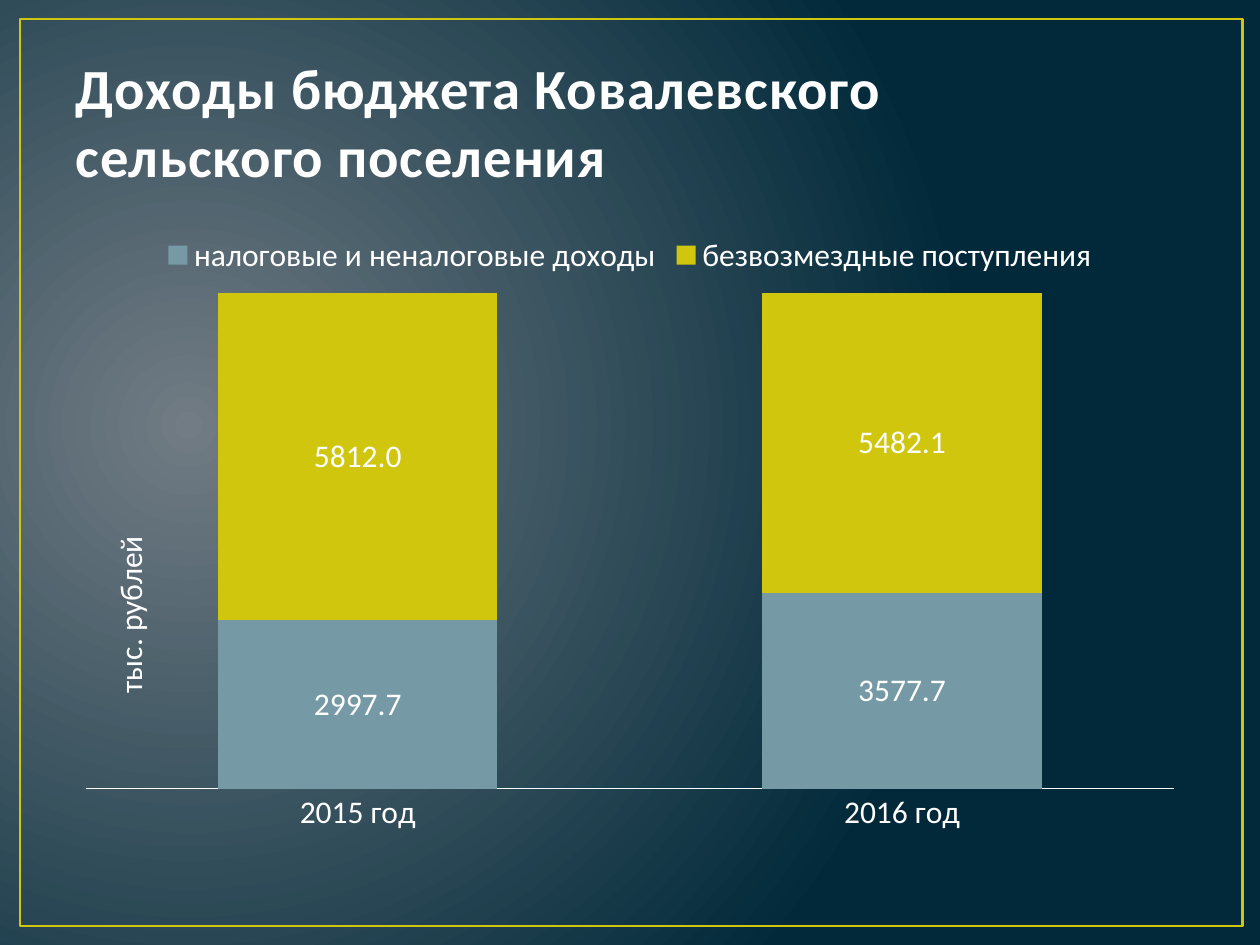
from pptx import Presentation
from pptx.chart.data import CategoryChartData
from pptx.dml.color import RGBColor
from pptx.enum.chart import XL_CHART_TYPE as ChartType
from pptx.enum.chart import XL_LABEL_POSITION as LabelPosition
from pptx.enum.chart import XL_LEGEND_POSITION as LegendPosition
from pptx.enum.chart import XL_TICK_MARK as TickMark
from pptx.enum.shapes import MSO_SHAPE as Preset
from pptx.enum.text import MSO_ANCHOR as Anchor
from pptx.enum.text import MSO_AUTO_SIZE as AutoSize
from pptx.enum.text import PP_ALIGN as Align
from pptx.oxml import parse_xml
from pptx.oxml.ns import nsdecls
from pptx.util import Inches, Pt

COLORS = {
    "glow": "717C84",
    "night": "01293A",
    "accent": "CFC60D",
    "teal": "759AA5",
    "title": "FEFEFE",
    "text": "FFFFFF",
}
FONT = "Calibri"


def color(name):
    return RGBColor.from_string(COLORS[name])


def set_font(font, size, name):
    font.name = FONT
    font.size = Pt(size)
    font.color.rgb = color(name)


presentation = Presentation()
presentation.slide_width = Inches(10)
presentation.slide_height = Inches(7.5)
slide = presentation.slides.add_slide(presentation.slide_layouts[5])

background = parse_xml(
    f'<p:bg {nsdecls("p", "a")}><p:bgPr><a:gradFill rotWithShape="1"><a:gsLst>'
    f'<a:gs pos="0"><a:srgbClr val="{COLORS["glow"]}"/></a:gs>'
    f'<a:gs pos="100000"><a:srgbClr val="{COLORS["night"]}"/></a:gs></a:gsLst>'
    '<a:path path="circle"><a:fillToRect l="15000" t="50000" r="85000" b="60000"/></a:path>'
    '</a:gradFill><a:effectLst/></p:bgPr></p:bg>'
)
slide.element.cSld.insert(0, background)

frame = slide.shapes.add_shape(
    Preset.RECTANGLE, Inches(0.16), Inches(0.15), Inches(9.7), Inches(7.2)
)
frame.shadow.inherit = False
frame.fill.background()
frame.line.color.rgb = color("accent")
frame.line.width = Pt(1.5)

title = slide.shapes.title
title.left, title.top = Inches(0.5), Inches(0.3)
title.width, title.height = Inches(9), Inches(1.25)
title.text_frame.text = "Доходы бюджета Ковалевского\vсельского поселения"
title.text_frame.vertical_anchor = Anchor.BOTTOM
title.text_frame.auto_size = AutoSize.NONE
paragraph = title.text_frame.paragraphs[0]
paragraph.alignment = Align.LEFT
set_font(paragraph.font, 32.4, "title")
paragraph.font.bold = True
paragraph.font._element.set("spc", "50")

chart_data = CategoryChartData(number_format="0.0")
chart_data.categories = ["2015 год", "2016 год"]
chart_data.add_series("налоговые и неналоговые доходы", (2997.7, 3577.7))
chart_data.add_series("безвозмездные поступления", (5812.0, 5482.1))
chart = slide.shapes.add_chart(
    ChartType.COLUMN_STACKED_100,
    Inches(0.5), Inches(1.75), Inches(9), Inches(4.95),
    chart_data,
).chart
set_font(chart.font, 18, "text")
chart.has_title = False
chart.has_legend = True
chart.legend.position = LegendPosition.TOP
chart.legend.include_in_layout = False
chart.value_axis.visible = False
chart.value_axis.has_major_gridlines = False
chart.category_axis.major_tick_mark = TickMark.NONE
chart.category_axis.format.line.color.rgb = color("text")

plot = chart.plots[0]
plot.gap_width = 95
plot.overlap = 100
for series, fill_name in zip(plot.series, ("teal", "accent")):
    series.format.fill.solid()
    series.format.fill.fore_color.rgb = color(fill_name)
    labels = series.data_labels
    labels.show_value = True
    labels.number_format = "0.0"
    labels.number_format_is_linked = False
    labels.position = LabelPosition.CENTER
    set_font(labels.font, 18, "text")

unit_label = slide.shapes.add_textbox(
    Inches(0.3), Inches(4.67), Inches(1.46), Inches(0.4)
)
unit_label.rotation = 270
unit_label.text_frame.word_wrap = False
unit_label.text_frame.auto_size = AutoSize.SHAPE_TO_FIT_TEXT
unit_label.text_frame.text = "тыс. рублей"
set_font(unit_label.text_frame.paragraphs[0].font, 18, "text")

presentation.save("out.pptx")
